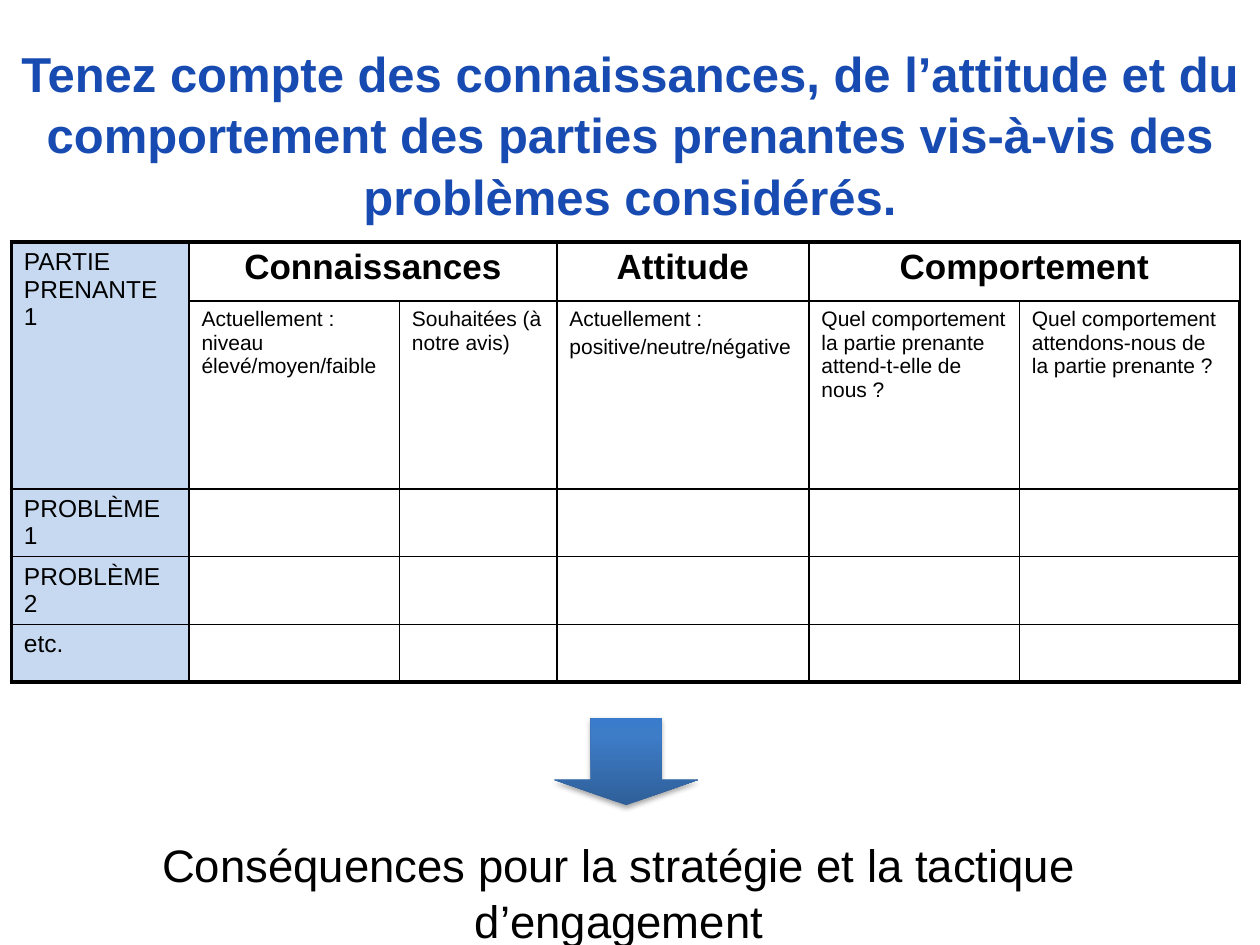
from lxml.etree import SubElement
from pptx import Presentation
from pptx.dml.color import RGBColor
from pptx.enum.shapes import MSO_SHAPE
from pptx.enum.text import MSO_ANCHOR, PP_ALIGN
from pptx.oxml import parse_xml
from pptx.oxml.ns import nsdecls, qn
from pptx.util import Inches, Pt

SLIDE_W, SLIDE_H = Inches(10), Inches(7.5)
FONT = "Arial"
BLACK, WHITE, TITLE_BLUE, LABEL_BLUE = "000000", "FFFFFF", "184BB2", "C6D9F1"
THIN, THICK = 1, 2.25

COLUMN_WIDTHS = [1.41, 1.67, 1.25, 2, 1.67, 1.75]
ROW_HEIGHTS = [0.47, 1.49, 0.46, 0.46, 0.46]
# Headings: text, first column, last column
HEADINGS = [("Connaissances", 1, 2), ("Attitude", 3, 3), ("Comportement", 4, 5)]
QUESTIONS = [
    ["Actuellement : niveau élevé/moyen/faible"],
    ["Souhaitées (à notre avis)"],
    ["Actuellement :", "positive/neutre/négative"],
    ["Quel comportement la partie prenante attend-t-elle de nous ?"],
    ["Quel comportement attendons-nous de la partie prenante ?"],
]
# Row labels: row, text
LABELS = [(0, "PARTIE PRENANTE 1"), (2, "PROBLÈME 1"), (3, "PROBLÈME 2"), (4, "etc.")]


def rgb(value):
    return RGBColor.from_string(value)


def write(frame, paragraphs, size, color=BLACK, bold=False,
          align=PP_ALIGN.LEFT, spacing=None):
    frame.word_wrap = True
    for i, text in enumerate(paragraphs):
        paragraph = frame.paragraphs[0] if i == 0 else frame.add_paragraph()
        paragraph.alignment = align
        paragraph.line_spacing = spacing
        if i:
            paragraph.space_before = Pt(size * 0.2)
        run = paragraph.add_run()
        run.text = text
        run.font.name, run.font.size, run.font.bold = FONT, Pt(size), bold
        run.font.color.rgb = rgb(color)


def set_borders(cell, widths):
    properties = cell._tc.get_or_add_tcPr()
    for side, width in zip("LRTB", widths):
        line = SubElement(properties, qn(f"a:ln{side}"), w=str(int(Pt(width))))
        fill = SubElement(line, qn("a:solidFill"))
        SubElement(fill, qn("a:srgbClr"), val=BLACK)


def add_title(slide, text):
    title = slide.shapes.title
    title.left, title.top = 0, Inches(0.25)
    title.width, title.height = SLIDE_W, Inches(1.61)
    title.text_frame.vertical_anchor = MSO_ANCHOR.MIDDLE
    write(title.text_frame, [text], 28, TITLE_BLUE, True, PP_ALIGN.CENTER, 1.05)


def add_stakeholder_table(slide):
    last_row, last_column = len(ROW_HEIGHTS) - 1, len(COLUMN_WIDTHS) - 1
    table = slide.shapes.add_table(
        last_row + 1, last_column + 1, Inches(0.09), Inches(1.92),
        Inches(sum(COLUMN_WIDTHS)), Inches(sum(ROW_HEIGHTS))).table
    table.first_row = table.horz_banding = False
    for column, width in zip(table.columns, COLUMN_WIDTHS):
        column.width = Inches(width)
    for row, height in zip(table.rows, ROW_HEIGHTS):
        row.height = Inches(height)

    # Thick outer frame, thin inner lines, tinted label column
    for r in range(last_row + 1):
        for c in range(last_column + 1):
            cell = table.cell(r, c)
            on_edge = (c == 0, c == last_column, r == 0, r == last_row)
            set_borders(cell, [THICK if edge else THIN for edge in on_edge])
            cell.fill.solid()
            cell.fill.fore_color.rgb = rgb(LABEL_BLUE if c == 0 else WHITE)

    table.cell(0, 0).merge(table.cell(1, 0))
    for text, first, last in HEADINGS:
        heading = table.cell(0, first)
        if last > first:
            heading.merge(table.cell(0, last))
        write(heading.text_frame, [text], 20, bold=True, align=PP_ALIGN.CENTER)
    for c, question in enumerate(QUESTIONS, start=1):
        write(table.cell(1, c).text_frame, question, 12)
    for r, label in LABELS:
        write(table.cell(r, 0).text_frame, [label], 14)


def add_down_arrow(slide):
    arrow = slide.shapes.add_shape(
        MSO_SHAPE.DOWN_ARROW, Inches(4.4), Inches(5.7), Inches(1.14), Inches(0.69))
    arrow.adjustments[0], arrow.adjustments[1] = 0.49, 0.29
    arrow.line.fill.background()
    arrow.shadow.inherit = False

    # Three-stop gradient, dark at the bottom
    stops = "".join(
        f'<a:gs pos="{share * 1000}"><a:srgbClr val="{color}"/></a:gs>'
        for share, color in [(0, "2F5F99"), (80, "3D7CC7"), (100, "3A7CCB")])
    gradient = parse_xml(
        f'<a:gradFill {nsdecls("a")} rotWithShape="1"><a:gsLst>{stops}</a:gsLst>'
        '<a:lin ang="16200000" scaled="0"/></a:gradFill>')
    arrow.fill.background()
    properties = arrow._element.spPr
    properties.replace(properties.find(qn("a:noFill")), gradient)

    # Soft shadow below
    shadow = SubElement(
        properties.find(qn("a:effectLst")), qn("a:outerShdw"),
        blurRad=str(int(Pt(3.1))), dist=str(int(Pt(1.8))), dir="5400000", rotWithShape="0")
    tint = SubElement(shadow, qn("a:srgbClr"), val=BLACK)
    SubElement(tint, qn("a:alpha"), val="35000")


def add_conclusion(slide, text):
    conclusion = slide.shapes.add_textbox(
        Inches(0.25), Inches(6.58), Inches(9.33), Inches(0.97))
    write(conclusion.text_frame, [text], 26, align=PP_ALIGN.CENTER, spacing=1.03)


def main():
    presentation = Presentation()
    presentation.slide_width, presentation.slide_height = SLIDE_W, SLIDE_H
    slide = presentation.slides.add_slide(presentation.slide_layouts[5])
    add_title(slide, "Tenez compte des connaissances, de l’attitude et du comportement "
                     "des parties prenantes vis-à-vis des problèmes considérés.")
    add_stakeholder_table(slide)
    add_down_arrow(slide)
    add_conclusion(slide, "Conséquences pour la stratégie et la tactique d’engagement")
    presentation.save("out.pptx")


if __name__ == "__main__":
    main()
